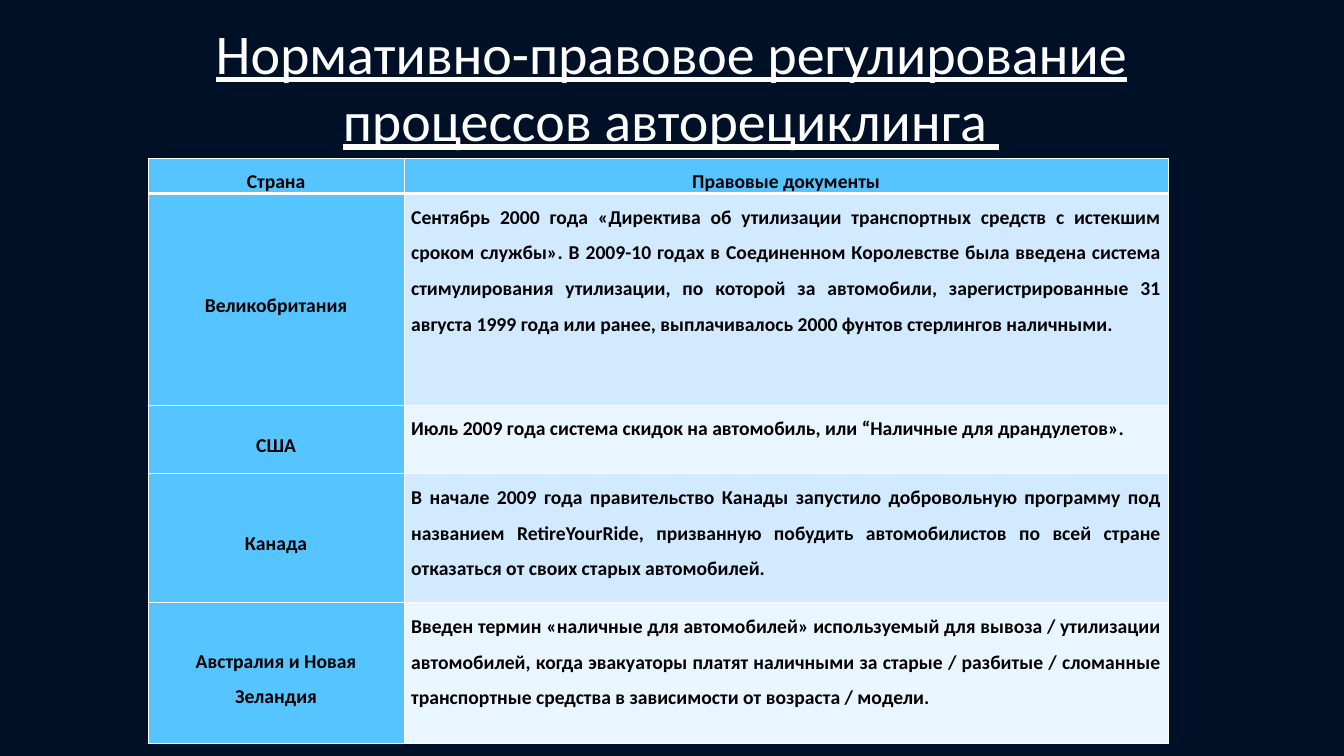
import pptx
import pptx.util
import pptx.dml.color
import pptx.enum.text
import pptx.oxml
import pptx.oxml.ns

Pt = pptx.util.Pt
ALIGN = pptx.enum.text.PP_ALIGN
ANCHOR = pptx.enum.text.MSO_ANCHOR


def paint(color_format, hex_color):
    color_format.rgb = pptx.dml.color.RGBColor.from_string(hex_color)


def add_border(cell, side, width):
    cell_properties = cell._tc.get_or_add_tcPr()
    cell_properties.append(pptx.oxml.parse_xml(
        f'<a:ln{side} {pptx.oxml.ns.nsdecls("a")} w="{Pt(width)}">'
        f'<a:solidFill><a:srgbClr val="FFFFFF"/></a:solidFill></a:ln{side}>'))


# Page
deck = pptx.Presentation()
deck.slide_width, deck.slide_height = Pt(960), Pt(540)
page = deck.slides.add_slide(deck.slide_layouts[6])
page.background.fill.solid()
paint(page.background.fill.fore_color, "001027")

# Title
title = page.shapes.add_textbox(Pt(119.5), Pt(9.4), Pt(720), Pt(104.4))
title.text_frame.word_wrap = True
title.text_frame.text = "Нормативно-правовое регулирование процессов авторециклинга "
para = title.text_frame.paragraphs[0]
para.alignment = ALIGN.CENTER
span = para.runs[0]
span.font.name = "Calibri"
span.font.size = Pt(40)
span.font.underline = True
paint(span.font.color, "FFFFFF")

# Table of countries and their legal documents
rows = [
    ("Страна", "Правовые документы"),
    ("Великобритания",
     "Сентябрь 2000 года «Директива об утилизации транспортных средств с истекшим "
     "сроком службы». В 2009-10 годах в Соединенном Королевстве была введена система "
     "стимулирования утилизации, по которой за автомобили, зарегистрированные 31 "
     "августа 1999 года или ранее, выплачивалось 2000 фунтов стерлингов наличными."),
    ("США",
     "Июль 2009 года система скидок на автомобиль, или “Наличные для драндулетов»."),
    ("Канада",
     "В начале 2009 года правительство Канады запустило добровольную программу под "
     "названием RetireYourRide, призванную побудить автомобилистов по всей стране "
     "отказаться от своих старых автомобилей."),
    ("Австралия и Новая Зеландия",
     "Введен термин «наличные для автомобилей» используемый для вывоза / утилизации "
     "автомобилей, когда эвакуаторы платят наличными за старые / разбитые / сломанные "
     "транспортные средства в зависимости от возраста / модели."),
]
column_widths = [182.9, 545.8]
row_heights = [24.5, 151.2, 49, 92.2, 100.8]
table = page.shapes.add_table(len(rows), 2, Pt(105.8), Pt(113), Pt(sum(column_widths)),
                              Pt(sum(row_heights))).table
for column, width in zip(table.columns, column_widths):
    column.width = Pt(width)

for row_number, (texts, height) in enumerate(zip(rows, row_heights)):
    table.rows[row_number].height = Pt(height)
    for column_number, text in enumerate(texts):
        cell = table.cell(row_number, column_number)
        heading = row_number == 0 or column_number == 0

        # Borders, with a thick rule under the header
        for side in "LRTB":
            at_header_rule = (row_number, side) in ((0, "B"), (1, "T"))
            add_border(cell, side, 3 if at_header_rule else 1)

        # Fill: headings in blue, text rows in alternating tints
        band = "D1EAFF" if row_number % 2 else "E9F5FF"
        cell.fill.solid()
        paint(cell.fill.fore_color, "56C5FF" if heading else band)

        # Text
        cell.margin_left = cell.margin_right = Pt(5)
        cell.margin_top = cell.margin_bottom = Pt(0)
        cell.vertical_anchor = ANCHOR.MIDDLE if heading else ANCHOR.TOP
        cell.text_frame.text = text
        para = cell.text_frame.paragraphs[0]
        para.alignment = ALIGN.CENTER if heading else ALIGN.JUSTIFY
        para.line_spacing = 1.5
        para.space_after = Pt(10)
        span = para.runs[0]
        span.font.name = "Calibri"
        span.font.size = Pt(14)
        span.font.bold = True
        paint(span.font.color, "000000")

deck.save("out.pptx")
